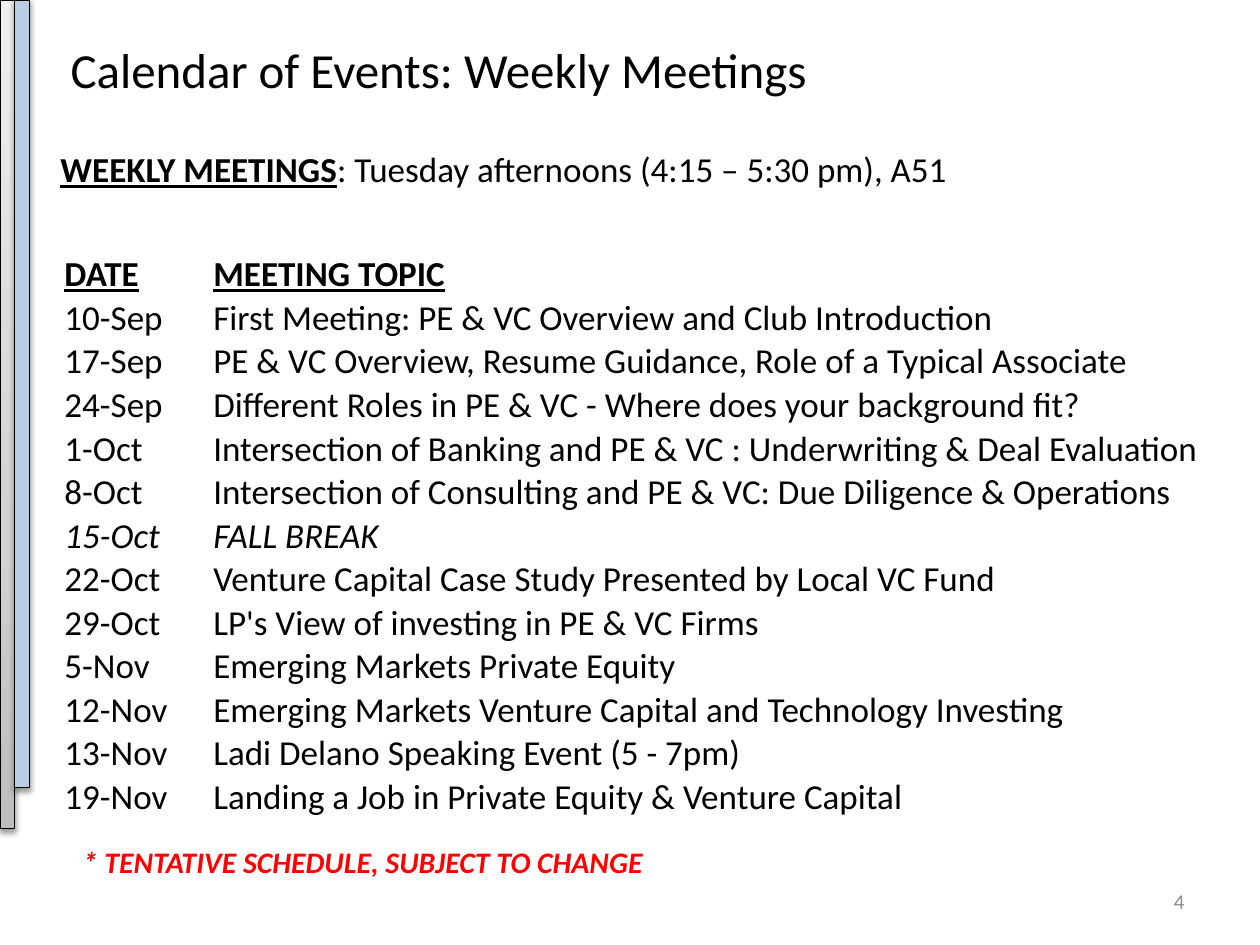
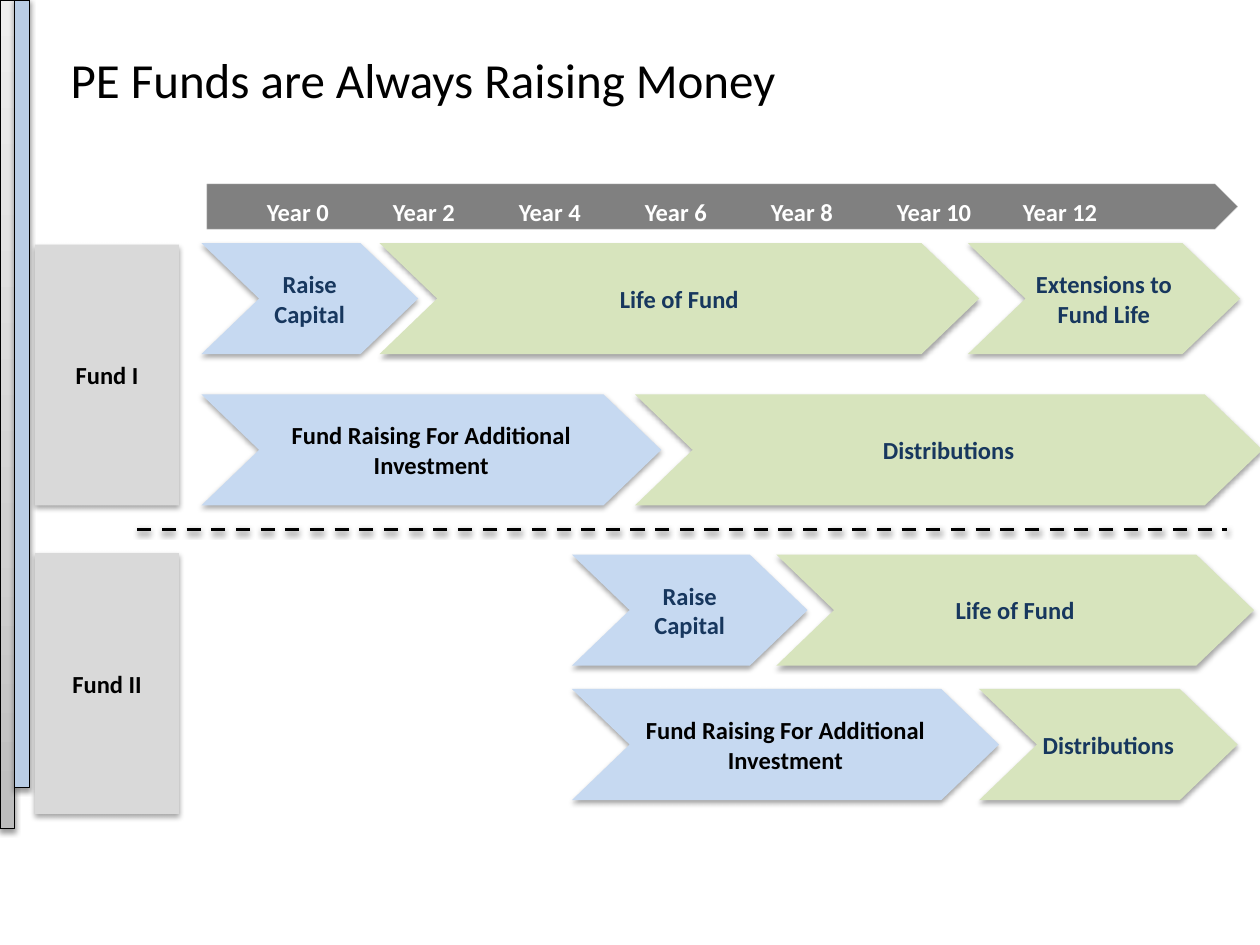
"""Build two club slides: the weekly meeting calendar and the fund timeline."""
from copy import deepcopy

from lxml import etree
from pptx import Presentation
from pptx import util as u
from pptx.dml.color import RGBColor
from pptx.enum import dml, shapes, text
from pptx.oxml.ns import qn

FONT = "Calibri"
BLACK, WHITE, RED = "000000", "FFFFFF", "FF0000"
NAVY, SKY, GREEN, BAND_BLUE = "17375E", "C6D9F1", "D7E4BD", "B9CDE5"
GREY, PALE_GREY, EDGE_GREY, NUMBER_GREY = "808080", "D9D9D9", "BFBFBF", "8C8C8C"
BAND_STOPS = ((0, "BDBDBD"), (35, "D1D1D1"), (100, "EEEEEE"))
LEFT, CENTER, RIGHT = text.PP_ALIGN.LEFT, text.PP_ALIGN.CENTER, text.PP_ALIGN.RIGHT
RECTANGLE = shapes.MSO_SHAPE.RECTANGLE
CHEVRON = shapes.MSO_SHAPE.CHEVRON
PENTAGON = shapes.MSO_SHAPE.PENTAGON
BAND_WIDTH = 0.3
YEAR_STEP = 2.54

MEETINGS = (
    ("10-Sep", "First Meeting: PE & VC Overview and Club Introduction"),
    ("17-Sep", "PE & VC Overview, Resume Guidance, Role of a Typical Associate"),
    ("24-Sep", "Different Roles in PE & VC - Where does your background fit?"),
    ("1-Oct", "Intersection of Banking and PE & VC : Underwriting & Deal Evaluation"),
    ("8-Oct", "Intersection of Consulting and PE & VC: Due Diligence & Operations"),
    ("15-Oct", "FALL BREAK"),
    ("22-Oct", "Venture Capital Case Study Presented by Local VC Fund"),
    ("29-Oct", "LP's View of investing in PE & VC Firms"),
    ("5-Nov", "Emerging Markets Private Equity"),
    ("12-Nov", "Emerging Markets Venture Capital and Technology Investing"),
    ("13-Nov", "Ladi Delano Speaking Event (5 - 7pm)"),
    ("19-Nov", "Landing a Job in Private Equity & Venture Capital"),
)

FUNDS = (("Fund I", 4.93), ("Fund II", 11.15))
RAISING = "Fund Raising For Additional Investment"
PHASE_ROWS = (
    (4.9, (("Raise Capital", 4.06, 4.37, SKY, NAVY),
           ("Life of Fund", 7.65, 12.09, GREEN, NAVY),
           ("Extensions to Fund Life", 19.51, 5.49, GREEN, NAVY))),
    (7.95, ((RAISING, 4.06, 9.27, SKY, BLACK),
            ("Distributions", 12.8, 12.65, GREEN, NAVY))),
    (11.18, (("Raise Capital", 11.53, 4.75, SKY, NAVY),
             ("Life of Fund", 15.65, 9.63, GREEN, NAVY))),
    (13.89, ((RAISING, 11.53, 8.61, SKY, BLACK),
             ("Distributions", 19.74, 5.21, GREEN, NAVY))),
)


def color(value):
    """Turn a hex string into a colour."""
    return RGBColor.from_string(value)


def lengths(*values):
    """Turn numbers of centimetres into lengths."""
    return [u.Cm(value) for value in values]


class Builder:
    """Hold the deck, its style and the current page."""

    def __init__(self):
        """Start an empty 4:3 deck."""
        self.deck = Presentation()
        self.deck.slide_width, self.deck.slide_height = lengths(25.4, 19.05)
        self.page = None

    def new_page(self, title, width, height):
        """Add a page with the side bands and a title."""
        self.page = self.deck.slides.add_slide(self.deck.slide_layouts[5])
        grey_band = self.shape(RECTANGLE, 0, 0, BAND_WIDTH, 16.71, PALE_GREY, BLACK, 0.75, 38)
        self.gradient(grey_band)
        self.shape(RECTANGLE, BAND_WIDTH, 0, BAND_WIDTH, 15.88, BAND_BLUE, BLACK, 0.75, 38)
        box = self.page.shapes.title
        box.left, box.top, box.width, box.height = lengths(1.17, 0.43, width, height)
        self.add_words(box.text_frame, [(title, {})], 28)

    def add_words(self, frame, runs, size, ink=BLACK, align=LEFT):
        """Put styled runs into the first paragraph of a frame."""
        frame.word_wrap = True
        frame.vertical_anchor = text.MSO_ANCHOR.MIDDLE
        para = frame.paragraphs[0]
        para.alignment = align
        for words, style in runs:
            span = para.add_run()
            span.text = words
            span.font.name, span.font.size = FONT, u.Pt(size)
            span.font.color.rgb = color(ink)
            span.font.bold = style.get("bold", False)
            span.font.italic = style.get("italic", False)
            span.font.underline = style.get("underline", False)

    def label(self, left, top, width, height, runs, size, ink=BLACK, align=LEFT):
        """Add a text box."""
        box = self.page.shapes.add_textbox(*lengths(left, top, width, height))
        self.add_words(box.text_frame, runs, size, ink, align)
        return box

    def shadow(self, item, opacity, distance):
        """Give a shape or connector a soft shadow straight below it."""
        effects = etree.SubElement(item._element.spPr, qn("a:effectLst"))
        outer = etree.SubElement(effects, qn("a:outerShdw"), blurRad=str(u.Pt(3.1)),
                                 dist=str(u.Pt(distance)), dir="5400000", rotWithShape="0")
        tone = etree.SubElement(outer, qn("a:srgbClr"), val=BLACK)
        etree.SubElement(tone, qn("a:alpha"), val=str(opacity * 1000))

    def shape(self, kind, left, top, width, height, fill, line=None, weight=0, opacity=0):
        """Add a filled preset shape, with an outline and shadow if asked."""
        shape = self.page.shapes.add_shape(kind, *lengths(left, top, width, height))
        shape.fill.solid()
        shape.fill.fore_color.rgb = color(fill)
        if line:
            shape.line.color.rgb = color(line)
            shape.line.width = u.Pt(weight)
        else:
            shape.line.fill.background()
        if opacity:
            self.shadow(shape, opacity, 1.7)
        else:
            shape.shadow.inherit = False
        return shape

    def gradient(self, shape):
        """Fill a shape with the grey of the outer band, dark at the bottom."""
        shape.fill.gradient()
        shape.fill.gradient_angle = 90
        stops = shape._element.spPr.find(".//" + qn("a:gsLst"))
        sample = deepcopy(stops[0])
        for stop in list(stops):
            stops.remove(stop)
        for _ in BAND_STOPS:
            stops.append(deepcopy(sample))
        for stop, (position, tone) in zip(shape.fill.gradient_stops, BAND_STOPS):
            stop.position = position / 100
            stop.color.rgb = color(tone)

    def block(self, kind, left, top, width, height, fill, words, ink):
        """Add a shadowed shape with a centred bold caption."""
        shape = self.shape(kind, left, top, width, height, fill, opacity=35)
        if kind == CHEVRON:
            shape.adjustments[0] = 0.52
        frame = shape.text_frame
        frame.margin_left = frame.margin_right = frame.margin_top = frame.margin_bottom = 0
        self.add_words(frame, [(words, {"bold": True})], 14, ink, CENTER)

    def divider(self, left, right, top):
        """Add a dashed horizontal line."""
        line = self.page.shapes.add_connector(shapes.MSO_CONNECTOR.STRAIGHT,
                                              *lengths(left, top, right, top))
        line.line.color.rgb = color(BLACK)
        line.line.width = u.Pt(2)
        line.line.dash_style = dml.MSO_LINE.DASH
        self.shadow(line, 38, 1.6)

    def table(self, left, top, widths, row_height, rows):
        """Add a plain table from rows of words and a style."""
        frame = self.page.shapes.add_table(
            len(rows), len(widths),
            *lengths(left, top, sum(widths), row_height * len(rows)))
        table = frame.table
        table.first_row = table.horz_banding = False
        for column, width in zip(table.columns, widths):
            column.width = u.Cm(width)
        for row, (entries, style) in zip(table.rows, rows):
            row.height = u.Cm(row_height)
            for cell, words in zip(row.cells, entries):
                cell.fill.background()
                cell.margin_left = cell.margin_right = cell.margin_top = u.Cm(0.03)
                cell.margin_bottom = 0
                cell.vertical_anchor = text.MSO_ANCHOR.MIDDLE
                self.add_words(cell.text_frame, [(words, style)], 20)

    def years(self, left, top, width, height, captions):
        """Add bold year captions set on evenly spaced tab stops."""
        box = self.label(left, top, width, height, [], 14)
        box.text_frame.margin_left = u.Cm(1.27)
        para = box.text_frame.paragraphs[0]
        stops = etree.SubElement(para._p.get_or_add_pPr(), qn("a:tabLst"))
        for number in range(1, len(captions)):
            etree.SubElement(stops, qn("a:tab"), pos=str(u.Cm(YEAR_STEP * number)), algn="l")
        self.add_words(box.text_frame, [("\t".join(captions), {"bold": True})], 14, WHITE)


def calendar_page(builder):
    """Build the meeting calendar."""
    heading = {"bold": True, "underline": True}
    builder.new_page("Calendar of Events: Weekly Meetings", 18.31, 1.91)
    builder.label(18.21, 17.65, 5.92, 1.02, [("4", {})], 12, NUMBER_GREY, RIGHT)
    builder.label(0.97, 2.84, 23.62, 1.12, [
        ("WEEKLY MEETINGS", heading),
        (": Tuesday afternoons (4:15 – 5:30 pm), A51", {})], 20)
    rows = [(("DATE", "MEETING TOPIC"), heading)]
    rows += [(entry, {"italic": entry[1] == "FALL BREAK"}) for entry in MEETINGS]
    builder.table(1.27, 5.08, (3, 20.62), 0.87, rows)
    builder.label(1.42, 16.87, 23.62, 0.99, [
        ("* TENTATIVE SCHEDULE, SUBJECT TO CHANGE", {"bold": True, "italic": True})], 17, RED)


def funds_page(builder):
    """Build the timeline of two overlapping funds."""
    builder.new_page("PE Funds are Always Raising Money", 22.38, 2.34)
    builder.shape(PENTAGON, 4.17, 3.71, 20.78, 0.91, GREY, EDGE_GREY, 0.25)
    builder.years(4.11, 3.61, 20.37, 1.3, [f"Year {year}" for year in range(0, 13, 2)])
    for name, top in FUNDS:
        builder.block(RECTANGLE, 0.71, top, 2.9, 5.26, PALE_GREY, name, BLACK)
    for top, phases in PHASE_ROWS:
        for words, left, width, fill, ink in phases:
            builder.block(CHEVRON, left, top, width, 2.24, fill, words, ink)
    builder.divider(2.77, 24.74, 10.67)


def main():
    """Build and save the deck."""
    builder = Builder()
    calendar_page(builder)
    funds_page(builder)
    builder.deck.save("out.pptx")


if __name__ == "__main__":
    main()
